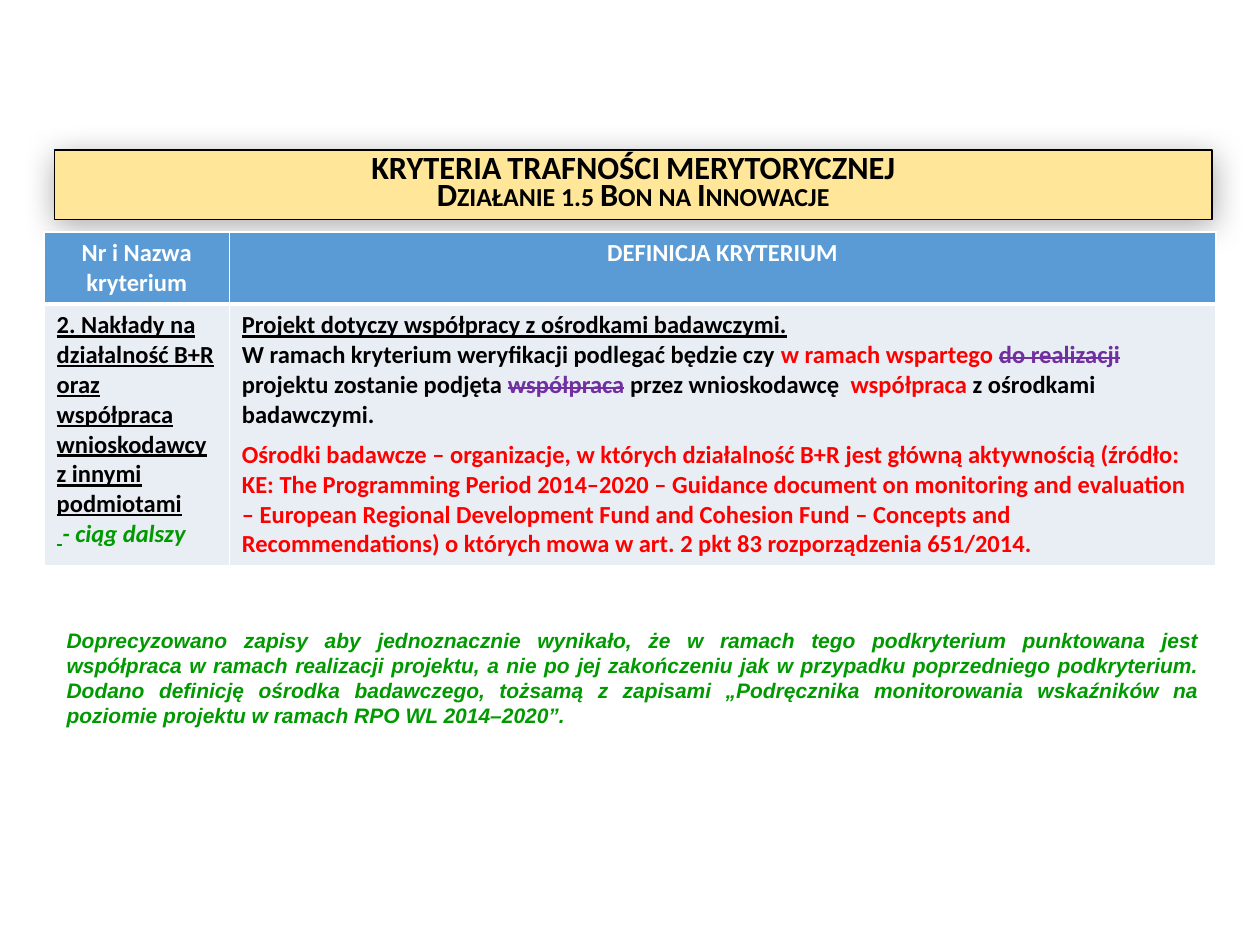
from dataclasses import dataclass

from lxml.etree import SubElement
from pptx import Presentation
from pptx.dml.color import RGBColor as Rgb
from pptx.enum.shapes import MSO_SHAPE as Shape
from pptx.enum.text import MSO_ANCHOR as Anchor, MSO_AUTO_SIZE as AutoSize, PP_ALIGN as Align
from pptx.oxml.ns import qn
from pptx.util import Inches, Pt


@dataclass(frozen=True)
class Theme:
    black: str = "000000"
    white: str = "FFFFFF"
    red: str = "FF0000"
    purple: str = "7030A0"
    green: str = "009900"
    banner: str = "FFE699"
    header: str = "5B9BD5"
    body: str = "E9EDF4"
    title_size: float = 18.5
    table_size: float = 14
    note_size: float = 12
    table_font: str = "Calibri"
    note_font: str = "Arial"


THEME = Theme()


@dataclass(frozen=True)
class Span:
    text: str
    color: str = THEME.black
    underline: bool = False
    italic: bool = False
    strike: bool = False
    small_caps: bool = False


class SlideBuilder:
    def __init__(self, slide, theme):
        self.slide = slide
        self.theme = theme

    def fill_text(self, frame, paragraphs, size, font, align=Align.LEFT):
        """Fill a text frame with paragraphs, each a list of spans."""
        for index, spans in enumerate(paragraphs):
            paragraph = frame.add_paragraph() if index else frame.paragraphs[0]
            paragraph.alignment = align
            for span in spans:
                run = paragraph.add_run()
                run.text = span.text
                run.font.size = Pt(size)
                run.font.name = font
                run.font.bold = True
                run.font.italic = span.italic
                run.font.underline = span.underline
                run.font.color.rgb = Rgb.from_string(span.color)
                properties = run._r.get_or_add_rPr()
                if span.strike:
                    properties.set("strike", "sngStrike")
                if span.small_caps:
                    properties.set("cap", "small")

    def banner(self, lines, left, top, width, height):
        box = self.slide.shapes.add_shape(Shape.RECTANGLE, left, top, width, height)
        box.fill.solid()
        box.fill.fore_color.rgb = Rgb.from_string(self.theme.banner)
        box.line.color.rgb = Rgb.from_string(self.theme.black)
        box.line.width = Pt(0.75)
        self.soft_shadow(box)
        frame = box.text_frame
        frame.word_wrap = True
        frame.vertical_anchor = Anchor.MIDDLE
        spans = [[Span(line, small_caps=True)] for line in lines]
        self.fill_text(frame, spans, self.theme.title_size, self.theme.table_font, Align.CENTER)
        for paragraph in frame.paragraphs:
            paragraph.line_spacing = 0.7

    def soft_shadow(self, box):
        box.shadow.inherit = False
        effects = box._element.spPr.find(qn("a:effectLst"))
        shadow = SubElement(effects, qn("a:outerShdw"), blurRad=str(Inches(0.25)),
                            dist=str(Pt(3)), dir="5220000", algn="ctr", rotWithShape="0")
        color = SubElement(shadow, qn("a:srgbClr"), val=self.theme.black)
        SubElement(color, qn("a:alpha"), val="33000")

    def criteria_table(self, rows, left, top, widths, heights):
        table = self.slide.shapes.add_table(
            len(rows), len(widths), left, top, sum(widths), sum(heights)).table
        table.horz_banding = False
        for column, width in zip(table.columns, widths):
            column.width = width
        for index, (row, height) in enumerate(zip(rows, heights)):
            table.rows[index].height = height
            is_header = index == 0
            for cell, paragraphs in zip(table.rows[index].cells, row):
                self.borders(cell, top=1 if is_header else 3, bottom=3 if is_header else 1)
                cell.fill.solid()
                cell.fill.fore_color.rgb = Rgb.from_string(
                    self.theme.header if is_header else self.theme.body)
                self.fill_text(cell.text_frame, paragraphs, self.theme.table_size,
                               self.theme.table_font, Align.CENTER if is_header else Align.LEFT)
        return table

    def borders(self, cell, top, bottom):
        properties = cell._tc.get_or_add_tcPr()
        for side, width in (("L", 1), ("R", 1), ("T", top), ("B", bottom)):
            line = SubElement(properties, qn(f"a:ln{side}"), w=str(Pt(width)))
            fill = SubElement(line, qn("a:solidFill"))
            SubElement(fill, qn("a:srgbClr"), val=self.theme.white)

    def note(self, text, left, top, width, height):
        frame = self.slide.shapes.add_textbox(left, top, width, height).text_frame
        frame.word_wrap = True
        frame.auto_size = AutoSize.SHAPE_TO_FIT_TEXT
        self.fill_text(frame, [[Span(text, self.theme.green, italic=True)]],
                       self.theme.note_size, self.theme.note_font, Align.JUSTIFY)


HEADINGS = [[[Span(heading, THEME.white)]]
            for heading in ("Nr i Nazwa kryterium", "DEFINICJA KRYTERIUM")]

CRITERION = [
    [Span("2. Nakłady na działalność B+R oraz współpraca wnioskodawcy z innymi podmiotami",
          underline=True)],
    [Span(" ", THEME.green, underline=True),
     Span("- ciąg dalszy", THEME.green, italic=True)],
]

DEFINITION = [
    [Span("Projekt dotyczy współpracy z ośrodkami badawczymi.", underline=True)],
    [Span("W ramach kryterium weryfikacji podlegać będzie czy "),
     Span("w ramach wspartego ", THEME.red),
     Span("do realizacji ", THEME.purple, strike=True),
     Span("projektu zostanie podjęta "),
     Span("współpraca", THEME.purple, strike=True),
     Span(" przez wnioskodawcę  "),
     Span("współpraca", THEME.red),
     Span(" z ośrodkami badawczymi.")],
    [Span("Ośrodki badawcze – organizacje, w których działalność B+R jest główną aktywnością "
          "(źródło: KE: The Programming Period 2014–2020 – Guidance document on monitoring and "
          "evaluation – European Regional Development Fund and Cohesion Fund – Concepts and "
          "Recommendations) o których mowa w art. 2 pkt 83 rozporządzenia 651/2014.",
          THEME.red)],
]

NOTE = ("Doprecyzowano zapisy aby jednoznacznie wynikało, że w ramach tego podkryterium "
        "punktowana jest współpraca w ramach realizacji projektu, a nie po jej zakończeniu jak "
        "w przypadku poprzedniego podkryterium. Dodano definicję ośrodka badawczego, tożsamą "
        "z zapisami „Podręcznika monitorowania wskaźników na poziomie projektu w ramach "
        "RPO WL 2014–2020”.")


def main():
    deck = Presentation()
    deck.slide_width, deck.slide_height = Inches(10), Inches(7.5)
    builder = SlideBuilder(deck.slides.add_slide(deck.slide_layouts[6]), THEME)

    margin, width = Inches(0.43), Inches(9.19)
    builder.banner(["KRYTERIA TRAFNOŚCI MERYTORYCZNEJ", "Działanie 1.5 Bon na Innowacje"],
                   margin, Inches(1.19), width, Inches(0.55))
    table = builder.criteria_table(
        [HEADINGS, [CRITERION, DEFINITION]], Inches(0.35), Inches(1.84),
        widths=[Inches(1.47), Inches(7.83)], heights=[Inches(0.57), Inches(2.05)])
    table.cell(1, 1).text_frame.paragraphs[-1].space_before = Pt(6)
    builder.note(NOTE, margin, Inches(4.93), width, Inches(0.91))

    deck.save("out.pptx")


if __name__ == "__main__":
    main()
